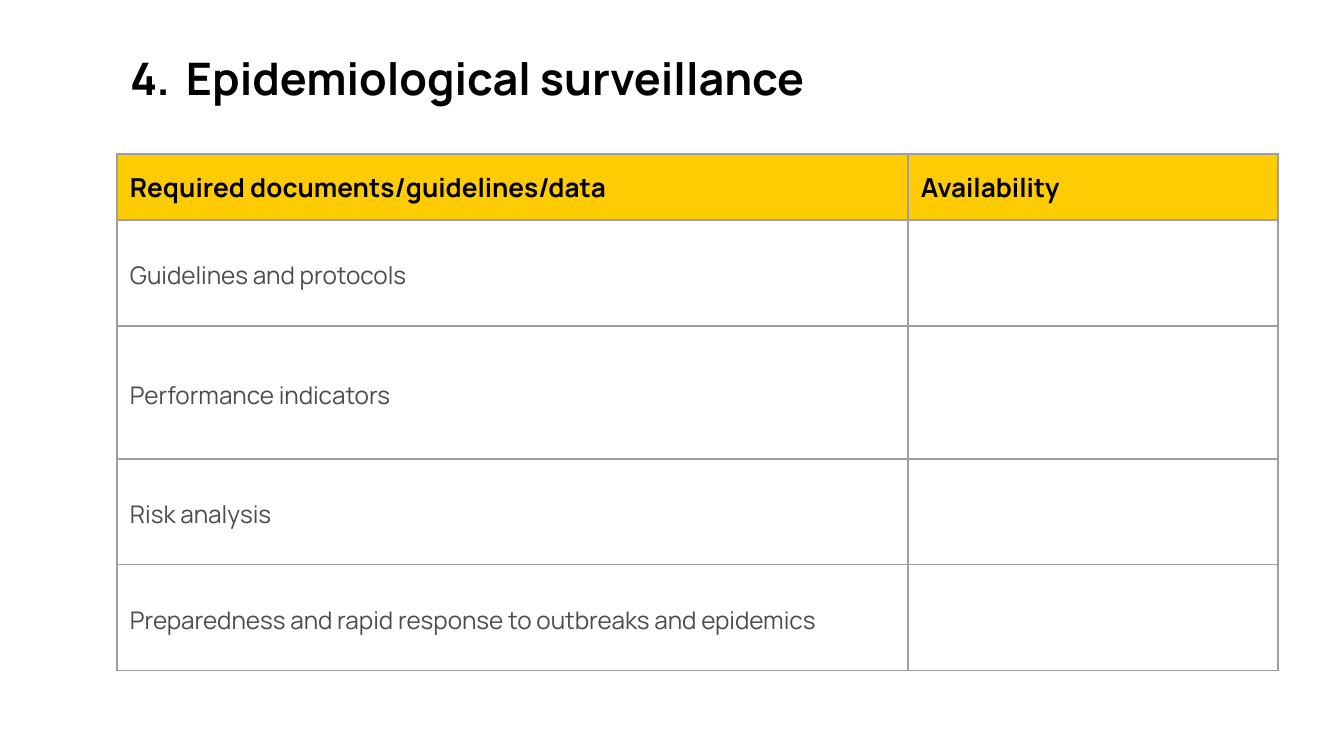
from lxml.etree import SubElement
from pptx import Presentation
from pptx.dml.color import RGBColor
from pptx.enum.text import MSO_ANCHOR
from pptx.oxml.ns import qn
from pptx.util import Pt

EMU_PER_PX = 914400 / 134.4
FONT = "Manrope"
INSET = 13
BORDER = "9E9E9E"
HEADINGS = ("Required documents/guidelines/data", "Availability")
REQUIREMENTS = (
    "Guidelines and protocols",
    "Performance indicators",
    "Risk analysis",
    "Preparedness and rapid response to outbreaks and epidemics",
)
COLUMN_WIDTHS = (791, 370)
HEADING_HEIGHT = 66
REQUIREMENT_HEIGHTS = (106, 133, 106, 106)


def px(length):
    return round(length * EMU_PER_PX)


def color(hex_code):
    return RGBColor.from_string(hex_code)


def style(paragraph, size, hex_code, bold):
    for run in paragraph.runs:
        run.font.name = FONT
        run.font.size = Pt(size)
        run.font.bold = bold
        run.font.color.rgb = color(hex_code)


def set_margins(holder):
    for side in ("left", "right", "top", "bottom"):
        setattr(holder, f"margin_{side}", px(INSET))


def add_borders(cell):
    properties = cell._tc.get_or_add_tcPr()
    for edge in ("lnL", "lnR", "lnT", "lnB"):
        line = SubElement(properties, qn(f"a:{edge}"), w=str(Pt(0.75)))
        fill = SubElement(line, qn("a:solidFill"))
        SubElement(fill, qn("a:srgbClr"), val=BORDER)


def add_title(slide, left, top, width, height):
    title = slide.shapes.add_textbox(px(left), px(top), px(width), px(height)).text_frame
    title.word_wrap = True
    set_margins(title)
    title.text = "4.\tEpidemiological surveillance"
    heading = title.paragraphs[0]
    tabs = SubElement(heading._p.get_or_add_pPr(), qn("a:tabLst"))
    SubElement(tabs, qn("a:tab"), pos=str(px(56)), algn="l")
    style(heading, 24, "000000", True)


def fill_cell(cell, text, is_heading):
    set_margins(cell)
    cell.vertical_anchor = MSO_ANCHOR.MIDDLE
    add_borders(cell)
    if is_heading:
        cell.fill.solid()
        cell.fill.fore_color.rgb = color("FFCB03")
    else:
        cell.fill.background()
    cell.text_frame.text = text
    label = cell.text_frame.paragraphs[0]
    if is_heading:
        style(label, 14, "000000", True)
    else:
        label.line_spacing = 1.15
        style(label, 13, "4C4C4C", False)


def add_checklist(slide, left, top):
    rows = [HEADINGS] + [(requirement, "") for requirement in REQUIREMENTS]
    heights = (HEADING_HEIGHT, *REQUIREMENT_HEIGHTS)
    checklist = slide.shapes.add_table(
        len(rows), len(COLUMN_WIDTHS), px(left), px(top),
        px(sum(COLUMN_WIDTHS)), px(sum(heights)),
    ).table
    checklist.horz_banding = False
    for column, width in zip(checklist.columns, COLUMN_WIDTHS):
        column.width = px(width)
    for index, (row, height, texts) in enumerate(zip(checklist.rows, heights, rows)):
        row.height = px(height)
        for cell, text in zip(row.cells, texts):
            fill_cell(cell, text, index == 0)


def main():
    presentation = Presentation()
    presentation.slide_width = px(1344)
    presentation.slide_height = px(756)
    slide = presentation.slides.add_slide(presentation.slide_layouts[6])
    add_title(slide, 117, 38, 1023, 79)
    add_checklist(slide, 117, 154)
    presentation.save("out.pptx")


if __name__ == "__main__":
    main()
